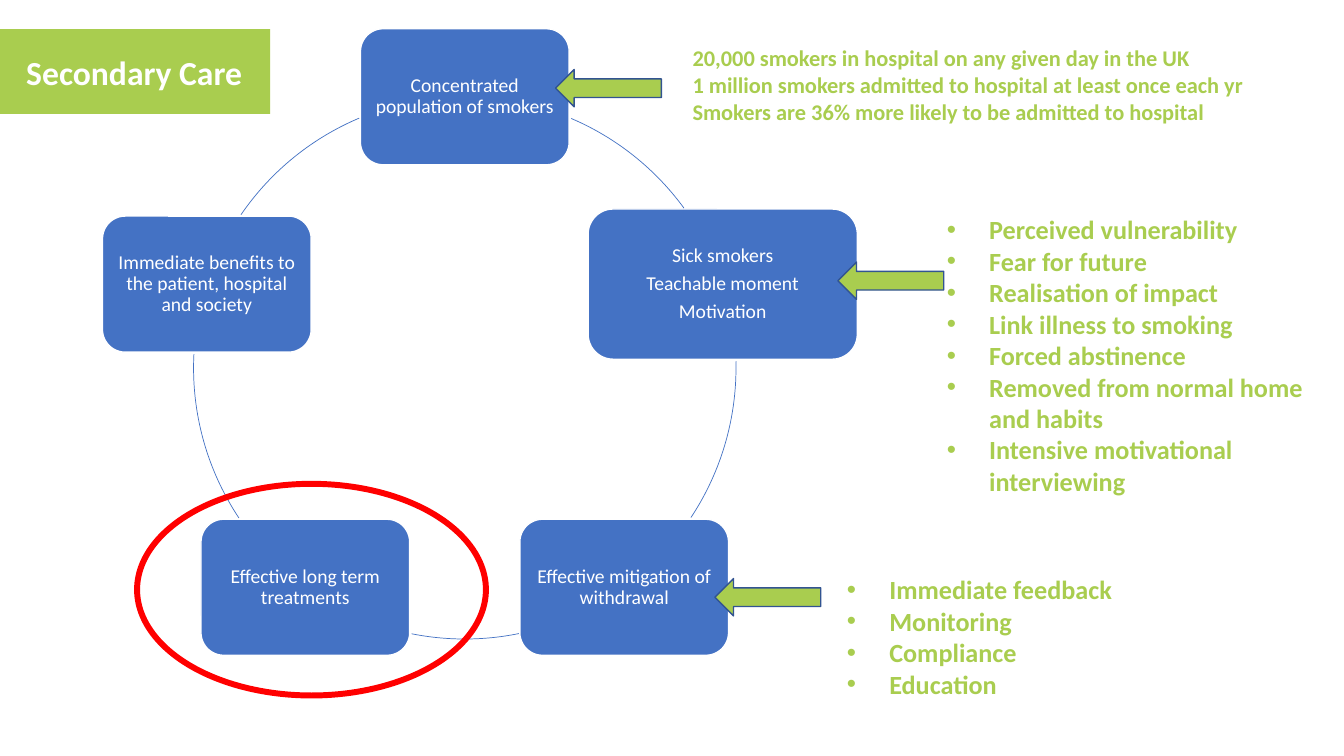
"""Build the Secondary Care slide: a cycle of five steps with notes on three."""
from math import cos, radians, sin

from lxml import etree
from pptx import Presentation
from pptx.dml.color import RGBColor
from pptx.enum.shapes import MSO_SHAPE
from pptx.enum.text import MSO_ANCHOR, MSO_AUTO_SIZE, PP_ALIGN
from pptx.oxml.ns import qn
from pptx.util import Inches, Pt

BLUE = RGBColor(0x44, 0x72, 0xC4)
GREEN = RGBColor(0xA9, 0xCD, 0x4F)
NAVY = RGBColor(0x32, 0x54, 0x91)
RED = RGBColor(0xFF, 0x00, 0x00)
WHITE = RGBColor(0xFF, 0xFF, 0xFF)

CENTER_X, CENTER_Y, RADIUS = 4.61, 3.65, 2.69

STEPS = [
    ("Concentrated population of smokers", 2.07, 1.35),
    ("Sick smokers\nTeachable moment\nMotivation", 2.67, 1.49),
    ("Effective mitigation of withdrawal", 2.07, 1.35),
    ("Effective long term treatments", 2.07, 1.35),
    ("Immediate benefits to the patient, hospital and society", 2.07, 1.35),
]
ARCS = [(293.1, 323.9), (358.6, 33.5), (78.5, 101.3), (146.4, 182.9), (214.4, 247.1)]
ARROWS = [(5.51, 0.69), (8.31, 2.6), (7.09, 5.74)]

FACTS = """20,000 smokers in hospital on any given day in the UK
1 million smokers admitted to hospital at least once each yr
Smokers are 36% more likely to be admitted to hospital"""
MOTIVES = """Perceived vulnerability
Fear for future
Realisation of impact
Link illness to smoking
Forced abstinence
Removed from normal home and habits
Intensive motivational interviewing"""
SUPPORT = """Immediate feedback
Monitoring
Compliance
Education"""


def place(sp, left, top, width, height):
    """Move and size a shape, in inches."""
    sp.left, sp.top = Inches(left), Inches(top)
    sp.width, sp.height = Inches(width), Inches(height)


def write(sp, text, size, color, bold=False, align=PP_ALIGN.LEFT, anchor=MSO_ANCHOR.TOP):
    """Fill a shape with evenly formatted paragraphs."""
    tf = sp.text_frame
    tf.text = text
    tf.word_wrap = True
    tf.auto_size = MSO_AUTO_SIZE.NONE
    tf.vertical_anchor = anchor
    for p in tf.paragraphs:
        p.alignment = align
        p.space_before = Pt(0)
        for r in p.runs:
            r.font.name = "Calibri"
            r.font.size = Pt(size)
            r.font.bold = bold
            r.font.color.rgb = color


def add_shape(slide, kind, box, fill, line, weight):
    """Add a preset shape without a shadow; no fill when fill is None."""
    sp = slide.shapes.add_shape(kind, *map(Inches, box))
    sp.shadow.inherit = False
    if fill is None:
        sp.fill.background()
    else:
        sp.fill.solid()
        sp.fill.fore_color.rgb = fill
    sp.line.color.rgb = line
    sp.line.width = Pt(weight)
    return sp


def add_step(slide, index, text, width, height):
    """Add one rounded step, centred on the circle."""
    angle = radians(72 * index - 90)
    left = CENTER_X + RADIUS * cos(angle) - width / 2
    top = CENTER_Y + RADIUS * sin(angle) - height / 2
    box = (left, top, width, height)
    sp = add_shape(slide, MSO_SHAPE.ROUNDED_RECTANGLE, box, BLUE, WHITE, 1)
    write(sp, text, 14, WHITE, align=PP_ALIGN.CENTER, anchor=MSO_ANCHOR.MIDDLE)
    tf = sp.text_frame
    tf.margin_left = tf.margin_right = tf.margin_top = tf.margin_bottom = Inches(0.06)
    for p in tf.paragraphs:
        p.line_spacing = 0.9
        p.space_after = Pt(4.9)


def add_arc(slide, start, end):
    """Add an arc of the circle between two clockwise angles in degrees."""
    box = (CENTER_X - RADIUS, CENTER_Y - RADIUS, 2 * RADIUS, 2 * RADIUS)
    sp = add_shape(slide, MSO_SHAPE.ARC, box, None, BLUE, 0.5)
    sp.adjustments[0] = start * 0.6
    sp.adjustments[1] = end * 0.6


def fill_title(title):
    """Turn the title placeholder into the green banner."""
    place(title, -0.26, 0.29, 2.94, 0.84)
    title.fill.solid()
    title.fill.fore_color.rgb = GREEN
    write(title, "Secondary Care", 24, WHITE, bold=True, anchor=MSO_ANCHOR.MIDDLE)
    title.text_frame.margin_left = Inches(0.52)


def fill_list(body, text, box):
    """Turn a body placeholder into a green bulleted list."""
    place(body, *box)
    write(body, text, 18.7, GREEN, bold=True)
    for p in body.text_frame.paragraphs:
        props = p._p.get_or_add_pPr()
        props.set("marL", str(Inches(0.42)))
        props.set("indent", str(-Inches(0.42)))
        etree.SubElement(props, qn("a:buFont"), typeface="Arial")
        etree.SubElement(props, qn("a:buChar"), char="•")


def main():
    """Build and save the slide."""
    prs = Presentation()
    prs.slide_width, prs.slide_height = Inches(13.33), Inches(7.5)
    slide = prs.slides.add_slide(prs.slide_layouts[3])

    fill_title(slide.shapes.title)
    fill_list(slide.placeholders[1], MOTIVES, (9.29, 2.07, 3.88, 2.93))
    fill_list(slide.placeholders[2], SUPPORT, (8.3, 5.64, 4.41, 1.36))

    for index, step in enumerate(STEPS):
        add_step(slide, index, *step)
    for start, end in ARCS:
        add_arc(slide, start, end)

    facts = slide.shapes.add_textbox(Inches(6.77), Inches(0.39), Inches(6.09), Inches(0.91))
    write(facts, FACTS, 16, GREEN, bold=True)
    for left, top in ARROWS:
        add_shape(slide, MSO_SHAPE.LEFT_ARROW, (left, top, 1.05, 0.37), GREEN, NAVY, 1)
    add_shape(slide, MSO_SHAPE.OVAL, (1.36, 4.8, 3.46, 2.1), None, RED, 4.25)

    prs.save("out.pptx")


if __name__ == "__main__":
    main()
